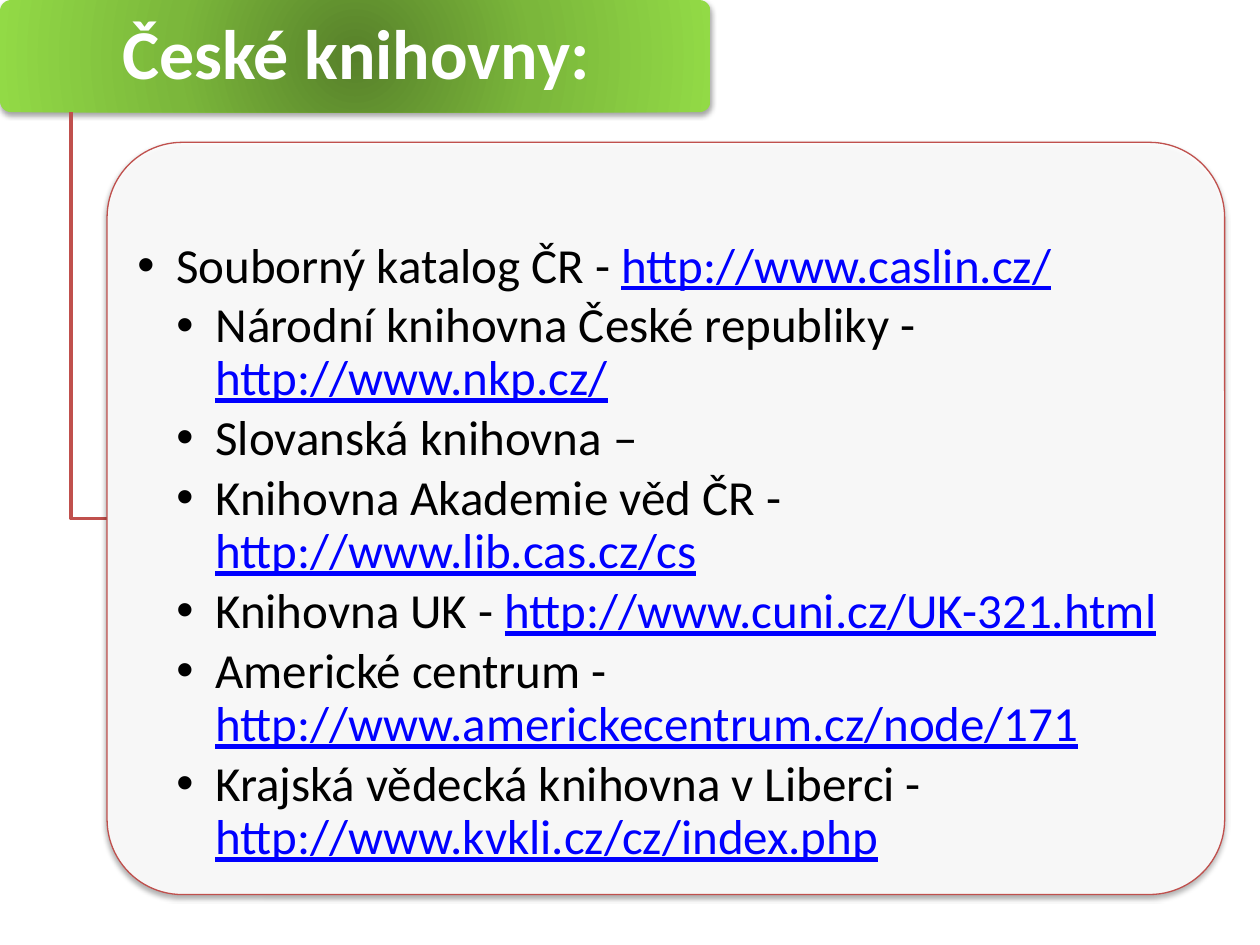
import pptx
import pptx.util
import pptx.oxml
import pptx.oxml.ns
import pptx.dml.color
import pptx.enum.shapes
import pptx.enum.text

TITLE = "České knihovny:"
LIBRARIES = [
    (1, "Souborný katalog ČR - ", "http://www.caslin.cz/"),
    (2, "Národní knihovna České republiky - ", "http://www.nkp.cz/"),
    (2, "Slovanská knihovna –", ""),
    (2, "Knihovna Akademie věd ČR - ", "http://www.lib.cas.cz/cs"),
    (2, "Knihovna UK - ", "http://www.cuni.cz/UK-321.html"),
    (2, "Americké centrum - ", "http://www.americkecentrum.cz/node/171"),
    (2, "Krajská vědecká knihovna v\u00a0Liberci - ", "http://www.kvkli.cz/cz/index.php"),
]

FONT = "Calibri"
WHITE = pptx.dml.color.RGBColor(0xFF, 0xFF, 0xFF)
BLACK = pptx.dml.color.RGBColor(0, 0, 0)
BLUE = pptx.dml.color.RGBColor(0, 0, 0xFF)
RED = pptx.dml.color.RGBColor(0xC0, 0x50, 0x4D)
GREENS = [
    (0, pptx.dml.color.RGBColor(0x57, 0x81, 0x2A)),
    (50, pptx.dml.color.RGBColor(0x7B, 0xB7, 0x3B)),
    (100, pptx.dml.color.RGBColor(0x92, 0xDA, 0x46)),
]

HEADER = (0, 0, 5.64, 0.89)
HEADER_TEXT = (0.03, 0.03, 5.59, 0.84)
PANEL = (0.85, 1.13, 8.87, 5.97)
PANEL_TEXT = (1.03, 1.87, 8.52, 5.05)
INDENT = 0.31

inches = pptx.util.Inches
points = pptx.util.Pt


def element(tag, attributes="", content=""):
    namespace = pptx.oxml.ns.nsdecls("a")
    return pptx.oxml.parse_xml(f"<a:{tag} {namespace} {attributes}>{content}</a:{tag}>")


def add_card(slide, box):
    shape = slide.shapes.add_shape(
        pptx.enum.shapes.MSO_SHAPE.ROUNDED_RECTANGLE, *map(inches, box))
    shape.adjustments[0] = 0.1
    shape.shadow.inherit = False
    effects = shape._element.spPr.find(pptx.oxml.ns.qn("a:effectLst"))
    effects.append(element(
        "outerShdw",
        f'blurRad="{points(3.1)}" dist="{points(1.8)}" dir="5400000" rotWithShape="0"',
        '<a:srgbClr val="000000"><a:alpha val="35000"/></a:srgbClr>'))
    return shape


def fill_radial(shape, stops):
    shape.fill.background()
    properties = shape._element.spPr
    colours = "".join(
        f'<a:gs pos="{position * 1000}"><a:srgbClr val="{colour}"/></a:gs>'
        for position, colour in stops)
    gradient = element(
        "gradFill", 'rotWithShape="1"',
        f'<a:gsLst>{colours}</a:gsLst><a:path path="circle">'
        '<a:fillToRect l="50000" t="50000" r="50000" b="50000"/></a:path>')
    properties.replace(properties.find(pptx.oxml.ns.qn("a:noFill")), gradient)


def add_text_frame(slide, box, side, edge):
    frame = slide.shapes.add_textbox(*map(inches, box)).text_frame
    frame.word_wrap = True
    frame.margin_left = frame.margin_right = inches(side)
    frame.margin_top = frame.margin_bottom = inches(edge)
    return frame


def style_paragraph(paragraph, size, colour):
    paragraph.line_spacing = 0.9
    paragraph.font.name = FONT
    paragraph.font.size = points(size)
    paragraph.font.color.rgb = colour


def add_header(slide):
    shape = add_card(slide, HEADER)
    fill_radial(shape, GREENS)
    shape.line.fill.background()
    frame = add_text_frame(slide, HEADER_TEXT, 0.08, 0.06)
    frame.vertical_anchor = pptx.enum.text.MSO_ANCHOR.MIDDLE
    paragraph = frame.paragraphs[0]
    paragraph.text = TITLE
    paragraph.alignment = pptx.enum.text.PP_ALIGN.CENTER
    style_paragraph(paragraph, 40, WHITE)
    paragraph.font.bold = True


def add_elbow(slide):
    left, top = HEADER[2] / 10, HEADER[3]
    right, bottom = PANEL[0], PANEL[1] + PANEL[3] / 2
    builder = slide.shapes.build_freeform(inches(left), inches(top))
    builder.add_line_segments(
        [(inches(left), inches(bottom)), (inches(right), inches(bottom))], close=False)
    elbow = builder.convert_to_shape()
    elbow.shadow.inherit = False
    elbow.fill.background()
    elbow.line.color.rgb = RED
    elbow.line.width = points(2)


def add_panel(slide):
    shape = add_card(slide, PANEL)
    shape.fill.solid()
    shape.fill.fore_color.rgb = WHITE
    colour = shape._element.spPr.find(".//" + pptx.oxml.ns.qn("a:srgbClr"))
    colour.append(element("alpha", 'val="90000"'))
    shape.line.color.rgb = RED
    shape.line.width = points(0.75)


def add_library_list(slide):
    frame = add_text_frame(slide, PANEL_TEXT, 0.06, 0.04)
    for index, (level, name, address) in enumerate(LIBRARIES):
        paragraph = frame.add_paragraph() if index else frame.paragraphs[0]
        paragraph.level = level
        properties = paragraph._p.get_or_add_pPr()
        properties.set("marL", str(inches(INDENT * level)))
        properties.set("indent", str(-inches(INDENT)))
        properties.append(element("buFont", 'typeface="Arial"'))
        properties.append(element("buChar", 'char="•"'))
        style_paragraph(paragraph, 28, BLACK)
        paragraph.space_after = points(4)
        paragraph.add_run().text = name
        if address:
            run = paragraph.add_run()
            run.text = address
            run.font.color.rgb = BLUE
            run.font.underline = True


def main():
    presentation = pptx.Presentation()
    presentation.slide_width = inches(10)
    presentation.slide_height = inches(7.5)
    slide = presentation.slides.add_slide(presentation.slide_layouts[6])
    add_header(slide)
    add_elbow(slide)
    add_panel(slide)
    add_library_list(slide)
    presentation.save("out.pptx")


if __name__ == "__main__":
    main()
